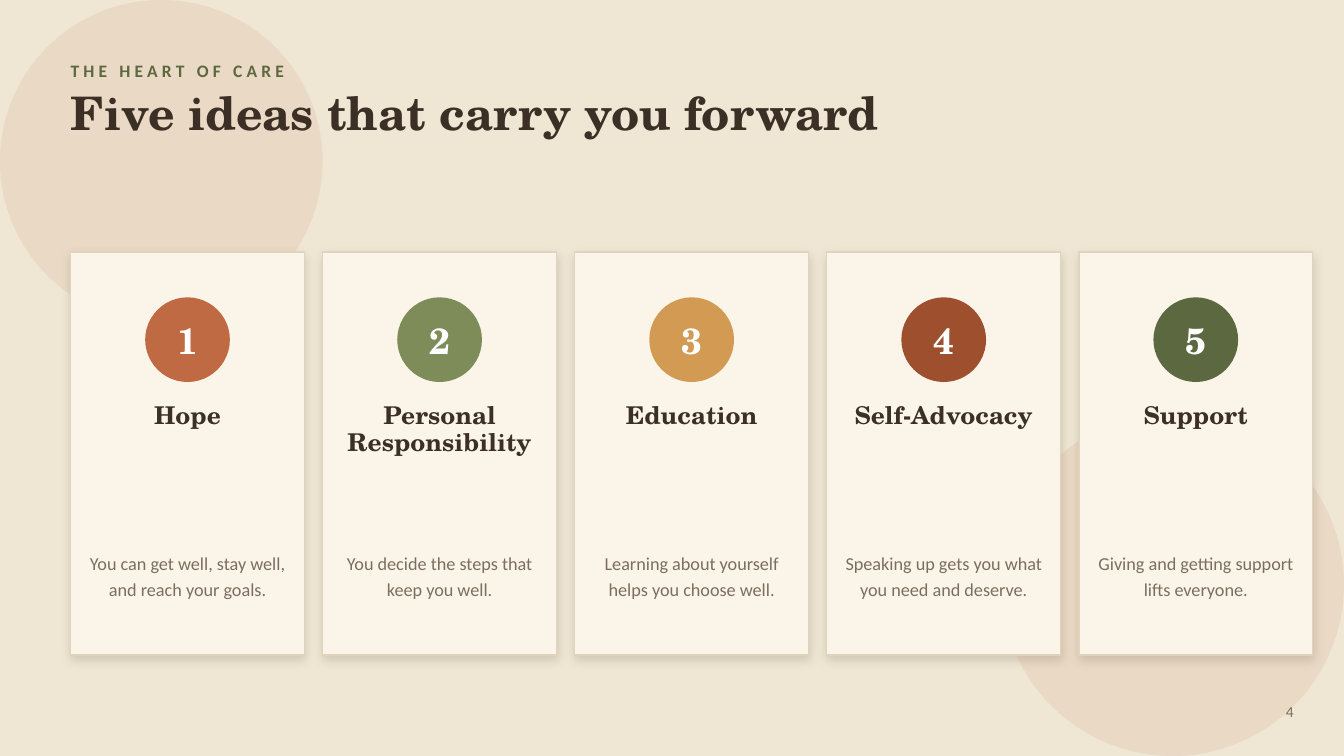
from lxml import etree
from pptx import Presentation
from pptx.dml.color import RGBColor
from pptx.enum.shapes import MSO_SHAPE as Shape
from pptx.enum.text import MSO_ANCHOR as Anchor, PP_ALIGN as Align
from pptx.oxml import parse_xml
from pptx.oxml.ns import nsdecls, qn
from pptx.util import Inches, Pt

COLORS = {
    "sand": "EFE6D3", "cream": "FBF5E9", "border": "E0D4BC",
    "ink": "3B2F26", "taupe": "7C6E5E", "white": "FFFFFF",
    "terracotta": "C06A43", "sage": "7E8C5A", "ochre": "D29A52",
    "rust": "9E4F2E", "moss": "5C6840",
}
SERIF, SANS = "TeX Gyre Schola", "Calibri"

# Text styles
EYEBROW = {"name": SANS, "size": Pt(12.5), "bold": True, "color": "moss"}
TITLE = {"name": SERIF, "size": Pt(33), "bold": True, "color": "ink"}
NUMBER = {"name": SERIF, "size": Pt(26), "bold": True, "color": "white"}
HEADING = {"name": SERIF, "size": Pt(17.5), "bold": True, "color": "ink"}
BODY = {"name": SANS, "size": Pt(13), "color": "taupe"}
PAGE = {"name": SANS, "size": Pt(11), "color": "taupe"}

IDEAS = [
    ("Hope", "You can get well, stay well, and reach your goals.", "terracotta"),
    ("Personal\nResponsibility", "You decide the steps that keep you well.", "sage"),
    ("Education", "Learning about yourself helps you choose well.", "ochre"),
    ("Self-Advocacy", "Speaking up gets you what you need and deserve.", "rust"),
    ("Support", "Giving and getting support lifts everyone.", "moss"),
]

deck = Presentation()
deck.slide_width, deck.slide_height = Inches(13.33), Inches(7.5)
slide = deck.slides.add_slide(deck.slide_layouts[6])
slide.background.fill.solid()
slide.background.fill.fore_color.rgb = RGBColor.from_string(COLORS["sand"])


def add_panel(kind, left, top, width, height, color):
    panel = slide.shapes.add_shape(
        kind, Inches(left), Inches(top), Inches(width), Inches(height))
    panel.shadow.inherit = False
    panel.fill.solid()
    panel.fill.fore_color.rgb = RGBColor.from_string(COLORS[color])
    panel.line.fill.background()
    return panel


def write(text, style, box, align=Align.LEFT, anchor=Anchor.TOP, spacing=None, inset=0):
    """Write into a shape, or into a new text box at (left, top, width, height)."""
    if isinstance(box, tuple):
        box = slide.shapes.add_textbox(*(Inches(length) for length in box))
    frame = box.text_frame
    frame.word_wrap = True
    frame.vertical_anchor = anchor
    for side in ("left", "right", "top", "bottom"):
        setattr(frame, f"margin_{side}", Inches(inset))
    frame.text = text
    for paragraph in frame.paragraphs:
        paragraph.alignment = align
        paragraph.line_spacing = spacing
        font = paragraph.runs[0].font
        for key, value in style.items():
            if key == "color":
                font.color.rgb = RGBColor.from_string(COLORS[value])
            else:
                setattr(font, key, value)
    return frame


# Translucent background circles
for left, top, size in [(0, 0, 3.2), (9.93, 4.1, 3.4)]:
    glow = add_panel(Shape.OVAL, left, top, size, size, "terracotta")
    tint = glow.fill._xPr.find(qn("a:solidFill"))[0]
    etree.SubElement(tint, qn("a:alpha"), val="10000")

# Heading
eyebrow = write("THE HEART OF CARE", EYEBROW, (0.7, 0.5, 9, 0.4), anchor=Anchor.MIDDLE)
eyebrow.paragraphs[0].runs[0].font._element.set("spc", "300")
write("Five ideas that carry you forward", TITLE, (0.7, 0.84, 11.9, 1))

# Five idea cards
CARD_WIDTH, CARD_STEP, BADGE = 2.32, 2.5, 0.84
for index, (heading, body, color) in enumerate(IDEAS):
    left = 0.7 + index * CARD_STEP
    card = add_panel(Shape.RECTANGLE, left, 2.5, CARD_WIDTH, 4, "cream")
    card.line.color.rgb = RGBColor.from_string(COLORS["border"])
    card.line.width = Pt(1)
    effects = card._element.spPr.find(qn("a:effectLst"))
    effects.append(parse_xml(
        f'<a:outerShdw {nsdecls("a")} blurRad="{Pt(7)}" dist="{Pt(3)}" dir="5400000" '
        f'algn="ctr" rotWithShape="0"><a:srgbClr val="{COLORS["ink"]}">'
        '<a:alpha val="16000"/></a:srgbClr></a:outerShdw>'))

    badge = add_panel(Shape.OVAL, left + (CARD_WIDTH - BADGE) / 2, 2.95, BADGE, BADGE, color)
    write(str(index + 1), NUMBER, badge, Align.CENTER, Anchor.MIDDLE)
    write(heading, HEADING, (left + 0.12, 4, CARD_WIDTH - 0.24, 1),
          Align.CENTER, spacing=Pt(19))
    write(body, BODY, (left + 0.18, 5.05, CARD_WIDTH - 0.36, 1.3),
          Align.CENTER, Anchor.MIDDLE, Pt(18))

# Page number
write("4", PAGE, (12.43, 6.88, 0.5, 0.35), Align.RIGHT, Anchor.MIDDLE, inset=0.1)

deck.save("out.pptx")
